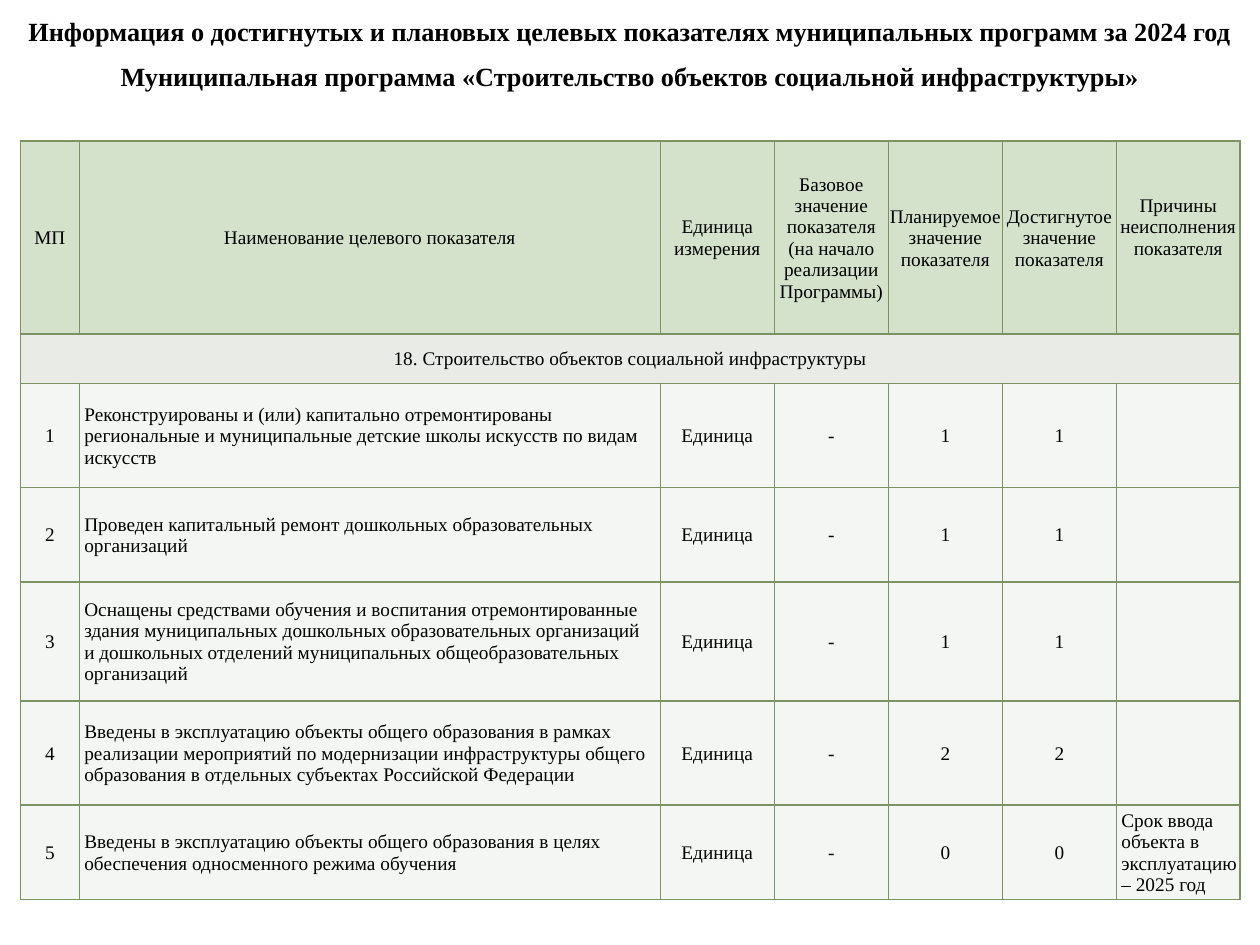
from lxml import etree
from pptx import Presentation
from pptx.dml.color import RGBColor
from pptx.enum.text import MSO_ANCHOR, PP_ALIGN
from pptx.oxml.ns import qn
from pptx.util import Cm, Pt

LEFT, CENTER = PP_ALIGN.LEFT, PP_ALIGN.CENTER
MIDDLE = MSO_ANCHOR.MIDDLE
FONT = "Times New Roman"
BLACK = RGBColor(0x00, 0x00, 0x00)
HEAD = RGBColor(0xC2, 0xD7, 0xB7)
BAND = RGBColor(0xE1, 0xE5, 0xDC)
BODY = RGBColor(0xF0, 0xF3, 0xEE)
EDGE = RGBColor(0x7D, 0x92, 0x63)
ALPHA = 70000

TITLES = [
    "Информация о достигнутых и плановых целевых показателях муниципальных программ за 2024 год",
    "Муниципальная программа «Строительство объектов социальной инфраструктуры»",
]
LABELS = [
    "МП",
    "Наименование целевого показателя",
    "Единица измерения",
    "Базовое значение показателя (на начало реализации Программы)",
    "Планируемое значение показателя",
    "Достигнутое значение показателя",
    "Причины неисполнения показателя",
]
GROUP = "18. Строительство объектов социальной инфраструктуры"
GOALS = [
    ("Реконструированы и (или) капитально отремонтированы региональные и "
     "муниципальные детские школы искусств по видам искусств", "1", "1", ""),
    ("Проведен капитальный ремонт дошкольных образовательных организаций", "1", "1", ""),
    ("Оснащены средствами обучения и воспитания отремонтированные здания "
     "муниципальных дошкольных образовательных организаций и дошкольных отделений "
     "муниципальных общеобразовательных организаций", "1", "1", ""),
    ("Введены в эксплуатацию объекты общего образования в рамках реализации "
     "мероприятий по модернизации инфраструктуры общего образования в отдельных "
     "субъектах Российской Федерации", "2", "2", ""),
    ("Введены в эксплуатацию объекты общего образования в целях обеспечения "
     "односменного режима обучения", "0", "0",
     "Срок ввода объекта в эксплуатацию – 2025 год"),
]
WIDTHS = [1.19, 11.71, 2.3, 2.3, 2.3, 2.3, 2.49]
HEIGHTS = [3.89, 1, 2.1, 1.9, 2.4, 2.1, 1.9]


def set_font(para, size, bold=False):
    """Set the font of a paragraph."""
    font = para.font
    font.name, font.size, font.bold = FONT, Pt(size), bold
    font.color.rgb = BLACK


def add_title(slide, text, top):
    """Add a centred bold line across the slide."""
    box = slide.shapes.add_textbox(0, Cm(top), Cm(25.4), Cm(0.89))
    box.text_frame.word_wrap = True
    para = box.text_frame.paragraphs[0]
    para.text = text
    para.alignment = CENTER
    set_font(para, 15, True)


def paint(cell, color):
    """Give a cell a translucent fill and four borders."""
    cell.fill.solid()
    cell.fill.fore_color.rgb = color
    props = cell._tc.get_or_add_tcPr()
    tint = props.find(qn("a:solidFill")).find(qn("a:srgbClr"))
    etree.SubElement(tint, qn("a:alpha"), val=str(ALPHA))
    for spot, side in enumerate(("lnL", "lnR", "lnT", "lnB")):
        line = etree.Element(qn("a:" + side), w=str(Pt(1)))
        fill = etree.SubElement(line, qn("a:solidFill"))
        etree.SubElement(fill, qn("a:srgbClr"), val=str(EDGE))
        props.insert(spot, line)


def fill_cell(cell, text, color, align=CENTER, side=0.1):
    """Write and style one table cell."""
    cell.text = text
    cell.vertical_anchor = MIDDLE
    cell.margin_left = cell.margin_right = Cm(side)
    cell.margin_top, cell.margin_bottom = Cm(0.03), 0
    para = cell.text_frame.paragraphs[0]
    para.alignment = align
    set_font(para, 11)
    paint(cell, color)


def add_grid(slide):
    """Add the table of goals."""
    frame = slide.shapes.add_table(
        len(HEIGHTS), len(WIDTHS), Cm(0.41), Cm(2.84), Cm(sum(WIDTHS)), Cm(sum(HEIGHTS)))
    table = frame.table
    table.horz_banding = False
    for col, width in zip(table.columns, WIDTHS):
        col.width = Cm(width)
    for row, height in zip(table.rows, HEIGHTS):
        row.height = Cm(height)

    for col, label in enumerate(LABELS):
        fill_cell(table.cell(0, col), label, HEAD, side=0.03)
        fill_cell(table.cell(1, col), "" if col else GROUP, BAND)
    last = len(LABELS) - 1
    table.cell(0, last).margin_bottom = Cm(0.43)
    table.cell(1, 0).merge(table.cell(1, last))

    for num, (name, plan, fact, cause) in enumerate(GOALS, 1):
        texts = [str(num), name, "Единица", "-", plan, fact, cause]
        for col, text in enumerate(texts):
            align = LEFT if col in (1, last) else CENTER
            fill_cell(table.cell(num + 1, col), text, BODY, align)
        table.cell(num + 1, last).margin_right = 0


def main():
    """Build and save the slide."""
    deck = Presentation()
    deck.slide_width, deck.slide_height = Cm(25.4), Cm(19.05)
    slide = deck.slides.add_slide(deck.slide_layouts[6])
    for num, text in enumerate(TITLES):
        add_title(slide, text, 0.18 + 0.91 * num)
    add_grid(slide)
    deck.save("out.pptx")


if __name__ == "__main__":
    main()
